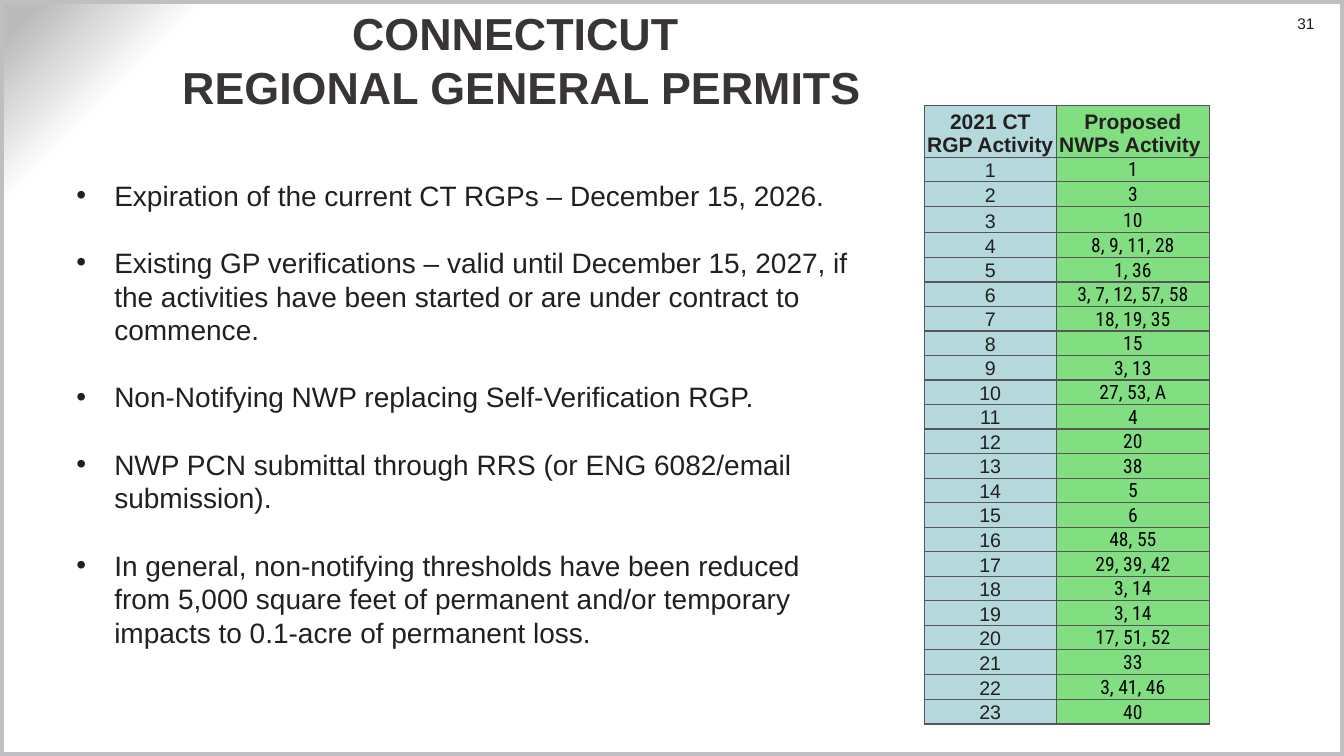
from lxml.etree import SubElement
from pptx import Presentation
from pptx.dml.color import RGBColor
from pptx.enum.shapes import MSO_SHAPE
from pptx.enum.text import MSO_ANCHOR, PP_ALIGN
from pptx.oxml import parse_xml
from pptx.oxml.ns import nsdecls, qn
from pptx.util import Pt

COLORS = {
    "ink": "221F20", "title": "393436", "black": "000000", "frame": "BFBFC2",
    "white": "FFFFFF", "corner": "BBBBBC", "grid": "565557",
    "current": "B5D8DD", "proposed": "81DF81",
}
WIDTH, HEIGHT = 960, 540

BULLETS = [
    "Expiration of the current CT RGPs – December 15, 2026.",
    "Existing GP verifications – valid until December 15, 2027, if the activities "
    "have been started or are under contract to commence.",
    "Non-Notifying NWP replacing Self-Verification RGP.",
    "NWP PCN submittal through RRS (or ENG 6082/email submission).",
    "In general, non-notifying thresholds have been reduced from 5,000 square feet "
    "of permanent and/or temporary impacts to 0.1-acre of permanent loss.",
]
HEADERS = ("2021 CT RGP Activity ", "Proposed NWPs Activity ")
PROPOSED_NWPS = [
    "1", "3", "10", "8, 9, 11, 28", "1, 36", "3, 7, 12, 57, 58", "18, 19, 35",
    "15", "3, 13", "27, 53, A", "4", "20", "38", "5", "6", "48, 55",
    "29, 39, 42", "3, 14", "3, 14", "17, 51, 52", "33", "3, 41, 46", "40",
]
HEADER_HEIGHT, ROW_HEIGHT = 36.6, 17.5
TALL_ROWS = {3: 19, 22: 18}


def rgb(name):
    return RGBColor.from_string(COLORS[name])


def style(para, size, color="ink", bold=False, align=PP_ALIGN.LEFT, name="Arial"):
    para.alignment = align
    font = para.font
    font.name, font.size, font.bold = name, Pt(size), bold
    font.color.rgb = rgb(color)


def add_background(page):
    page.background.fill.solid()
    stops = "".join(
        f'<a:gs pos="{pos * 1000}"><a:srgbClr val="{COLORS[name]}"/></a:gs>'
        for pos, name in ((87, "white"), (90, "white"), (98, "corner")))
    gradient = parse_xml(
        f'<a:gradFill {nsdecls("a")} rotWithShape="1"><a:gsLst>{stops}</a:gsLst>'
        '<a:path path="circle"><a:fillToRect l="100000" t="100000"/></a:path>'
        '</a:gradFill>')
    properties = page.element.find(".//" + qn("p:bgPr"))
    properties.replace(properties[0], gradient)


def add_frame(page):
    frame = page.shapes.add_shape(MSO_SHAPE.RECTANGLE, 0, 0, Pt(WIDTH), Pt(HEIGHT))
    frame.shadow.inherit = False
    frame.fill.background()
    frame.line.color.rgb = rgb("frame")
    frame.line.width = Pt(6)


def add_box(page, left, top, width, height, margins=(7.2, 3.6, 7.2, 3.6)):
    box = page.shapes.add_textbox(Pt(left), Pt(top), Pt(width), Pt(height))
    frame = box.text_frame
    frame.word_wrap = True
    (frame.margin_left, frame.margin_top,
     frame.margin_right, frame.margin_bottom) = map(Pt, margins)
    return frame


def add_bullets(page):
    frame = add_box(page, 47.5, 123.8, 567.4, 346.3)
    for index, text in enumerate(BULLETS):
        para = frame.add_paragraph() if index else frame.paragraphs[0]
        para.text = text
        if index:
            para.space_before = Pt(24)
        properties = para._p.get_or_add_pPr()
        properties.set("marL", str(Pt(27)))
        properties.set("indent", str(Pt(-27)))
        SubElement(properties, qn("a:buFont"), typeface="Arial")
        SubElement(properties, qn("a:buChar"), char="•")
        style(para, 20)


def add_borders(cell):
    properties = cell._tc.get_or_add_tcPr()
    for index, side in enumerate(("lnL", "lnR", "lnT", "lnB")):
        properties.insert(index, parse_xml(
            f'<a:{side} {nsdecls("a")} w="{Pt(1)}"><a:solidFill>'
            f'<a:srgbClr val="{COLORS["grid"]}"/></a:solidFill></a:{side}>'))


def fill_cell(cell, text, fill, **font):
    cell.text = text
    cell.vertical_anchor = MSO_ANCHOR.BOTTOM
    cell.margin_left = cell.margin_right = cell.margin_top = Pt(0.7)
    cell.margin_bottom = 0
    cell.fill.solid()
    cell.fill.fore_color.rgb = rgb(fill)
    add_borders(cell)
    style(cell.text_frame.paragraphs[0], align=PP_ALIGN.CENTER, **font)


def add_permit_table(page):
    table = page.shapes.add_table(len(PROPOSED_NWPS) + 1, 2, Pt(660.2), Pt(75.6),
                                  Pt(203.8), Pt(442)).table
    table.columns[0].width, table.columns[1].width = Pt(94.3), Pt(109.5)
    table.rows[0].height = Pt(HEADER_HEIGHT)
    for column, (text, fill) in enumerate(zip(HEADERS, ("current", "proposed"))):
        fill_cell(table.cell(0, column), text, fill, size=15, bold=True)
    for activity, permits in enumerate(PROPOSED_NWPS, 1):
        table.rows[activity].height = Pt(TALL_ROWS.get(activity, ROW_HEIGHT))
        fill_cell(table.cell(activity, 0), str(activity), "current", size=14)
        fill_cell(table.cell(activity, 1), permits, "proposed", size=14,
                  color="black", name="Roboto Condensed")


def main():
    deck = Presentation()
    deck.slide_width, deck.slide_height = Pt(WIDTH), Pt(HEIGHT)
    page = deck.slides.add_slide(deck.slide_layouts[6])

    # Backdrop and page number
    add_background(page)
    number = add_box(page, 895.7, 10, 43.2, 13.7, margins=(7.2, 0, 0, 0))
    number.text = "31"
    style(number.paragraphs[0], 11, align=PP_ALIGN.RIGHT)
    add_frame(page)

    # Title
    title = add_box(page, 74.9, 10, 595.4, 65.5, margins=(3.6, 0, 3.6, 0))
    title.vertical_anchor = MSO_ANCHOR.MIDDLE
    title.text = "CONNECTICUT \vREGIONAL GENERAL PERMITS"
    style(title.paragraphs[0], 32, "title", bold=True, align=PP_ALIGN.CENTER)

    # Content
    add_bullets(page)
    add_permit_table(page)

    deck.save("out.pptx")


if __name__ == "__main__":
    main()
